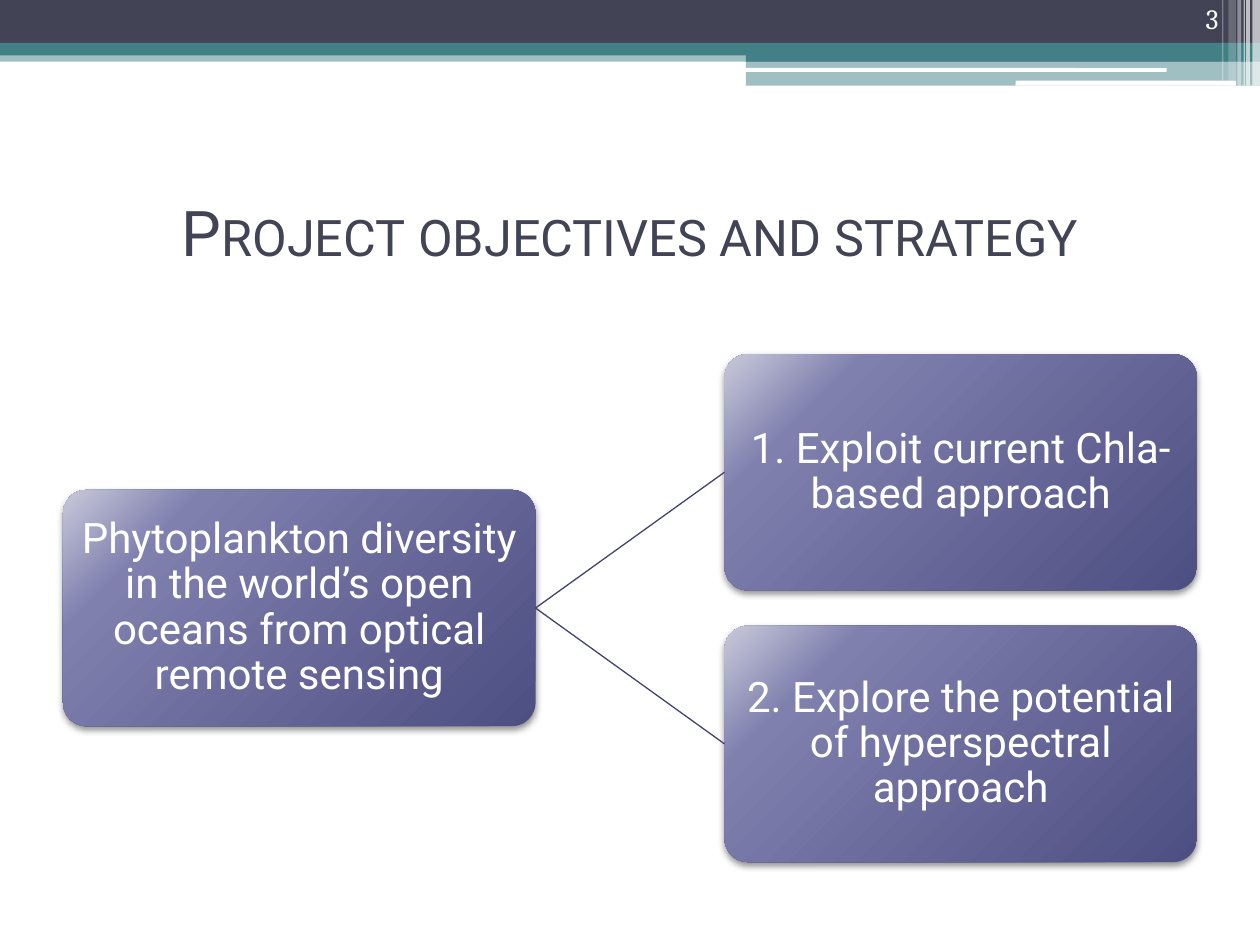
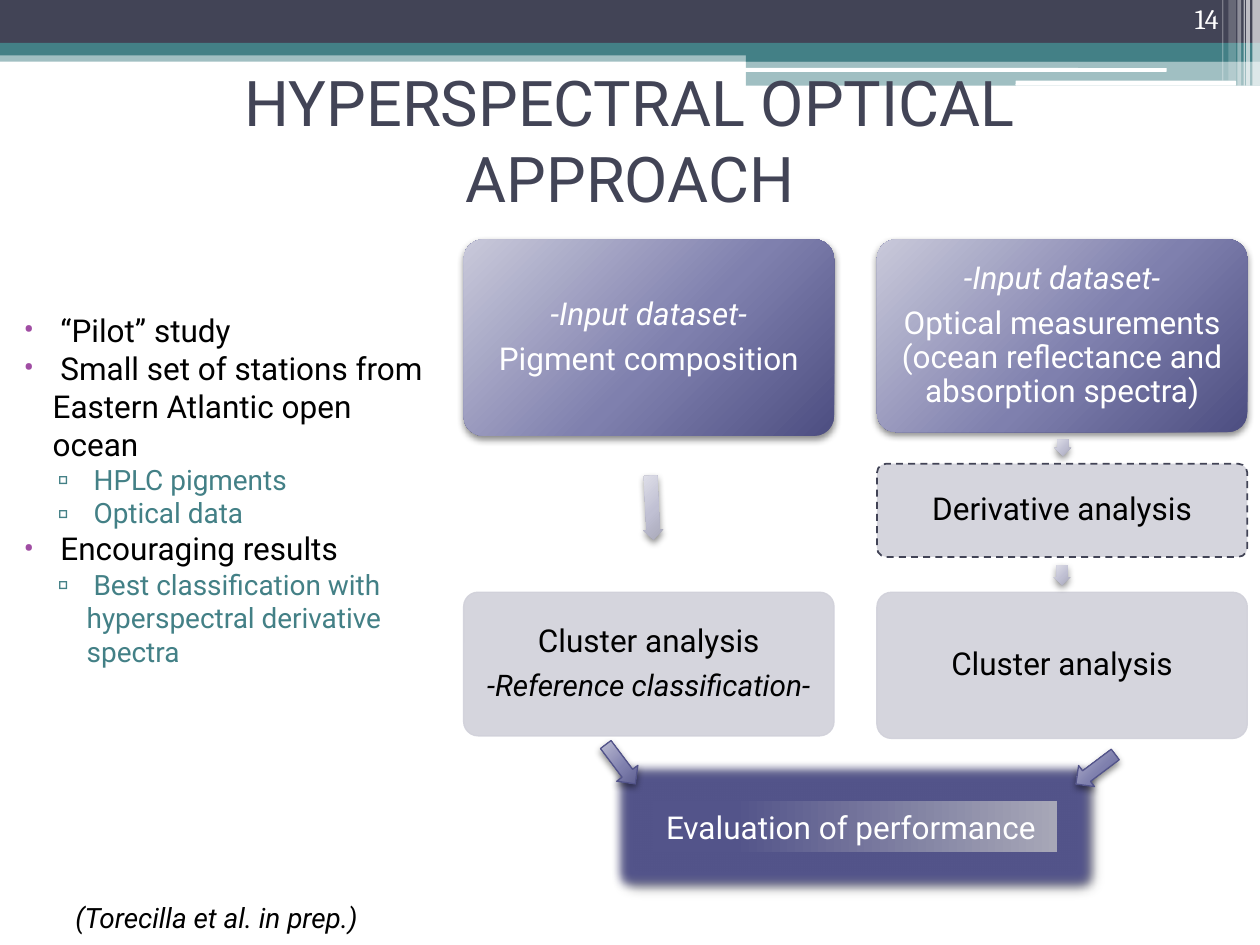
from dataclasses import dataclass
from typing import NamedTuple

from lxml.etree import SubElement
from pptx import Presentation
from pptx.dml.color import RGBColor
from pptx.enum.dml import MSO_LINE
from pptx.enum.shapes import MSO_CONNECTOR, MSO_SHAPE
from pptx.enum.text import MSO_ANCHOR, PP_ALIGN
from pptx.oxml import parse_xml
from pptx.oxml.ns import nsdecls, qn
from pptx.util import Inches, Pt

WIDTH, HEIGHT = Inches(10), Inches(7.5)


@dataclass(frozen=True)
class Theme:
    font: str = "Roboto"
    number_font: str = "Cambria"
    ink: str = "424456"
    teal: str = "438086"
    violet: str = "53548A"
    link: str = "42436F"
    bullet: str = "A04DA3"
    pale: str = "D1D1DA"
    white: str = "FFFFFF"
    black: str = "000000"
    title: float = 36
    card: float = 24
    body: float = 18
    note: float = 17
    small: float = 16


T = Theme()


class Box(NamedTuple):
    """Left, top, width and height in percent of the slide."""
    x: float
    y: float
    w: float
    h: float

    def emu(self) -> tuple[int, ...]:
        sizes = (WIDTH, HEIGHT, WIDTH, HEIGHT)
        return tuple(round(v * s / 100) for v, s in zip(self, sizes))


class Gradient(NamedTuple):
    stops: tuple
    radial: bool = True


class Shadow(NamedTuple):
    alpha: int = 45
    blur: float = 4
    dist: float = 2
    angle: int = 90


class Band(NamedTuple):
    box: Box
    color: str
    alpha: int = 100
    rounded: bool = False


class Card(NamedTuple):
    box: Box
    lines: tuple
    fill: object
    color: str = T.white
    line: str | None = None
    dashed: bool = False
    size: float = T.body


class Arrow(NamedTuple):
    box: Box
    angle: float
    fill: Gradient
    line: str | None = None
    shaft: float = 0.667


class Line(NamedTuple):
    text: str
    italic: bool = False
    size: float | None = None


class Bullet(NamedTuple):
    text: str
    level: int = 0


CARD_GRAD = Gradient(((0, "C9C9DA"), (20, "7F80AE"), (100, "4D4E81")))
DEEP_GRAD = Gradient(((0, "C9C9DA"), (55, "7F80AE"), (100, "4D4E81")))
PALE_GRAD = Gradient(((0, "E1E1EA"), (55, "C0C0D3"), (100, "A7A7B7")))
RESULT_GRAD = Gradient(((0, T.violet), (20, T.violet), (100, "A7A7B7")), radial=False)

BANDS = [
    Band(Box(0, 5.33, 100, 1.2), T.teal, 50),
    Band(Box(0, 0, 100, 4.53), T.ink),
    Band(Box(0, 4.53, 100, 1.33), T.teal),
    Band(Box(59.2, 5.2, 40.8, 1.33), T.teal),
    Band(Box(59.2, 6.4, 40.8, 2.67), T.teal, 50),
    Band(Box(59.1, 7.2, 33.5, 0.4), T.white, rounded=True),
    Band(Box(80.6, 8.53, 17.5, 0.53), T.white, rounded=True),
    *(Band(Box(x, 0, w, h), T.white, alpha) for x, w, h, alpha in (
        (99.4, 0.6, 9.07, 65), (98.9, 0.3, 9.07, 65), (98.7, 0.1, 9.07, 60),
        (98.2, 0.3, 9.07, 40), (97.5, 0.6, 8.53, 20), (97, 0.1, 8.53, 30))),
]


def rgb(color: str) -> RGBColor:
    return RGBColor.from_string(color)


def set_alpha(fill_parent, alpha: int) -> None:
    if alpha < 100:
        clr = fill_parent.find(qn("a:solidFill")).find(qn("a:srgbClr"))
        SubElement(clr, qn("a:alpha"), val=str(alpha * 1000))


def set_gradient(sp, grad: Gradient) -> None:
    stops = "".join(f'<a:gs pos="{pos * 1000}"><a:srgbClr val="{c}"/></a:gs>'
                    for pos, c in grad.stops)
    course = ('<a:path path="circle"><a:fillToRect l="-40000" t="-90000" '
              'r="140000" b="190000"/></a:path>' if grad.radial
              else '<a:lin ang="0" scaled="0"/>')
    spPr = sp._element.spPr
    spPr.replace(spPr.find(qn("a:solidFill")), parse_xml(
        f'<a:gradFill {nsdecls("a")} rotWithShape="1">'
        f'<a:gsLst>{stops}</a:gsLst>{course}</a:gradFill>'))


def add_shadow(sp, shadow: Shadow) -> None:
    effects = sp._element.spPr.find(qn("a:effectLst"))
    effects.append(parse_xml(
        f'<a:outerShdw {nsdecls("a")} blurRad="{Pt(shadow.blur)}" '
        f'dist="{Pt(shadow.dist)}" dir="{shadow.angle * 60000}" rotWithShape="0">'
        f'<a:srgbClr val="{T.black}"><a:alpha val="{shadow.alpha * 1000}"/>'
        '</a:srgbClr></a:outerShdw>'))


def add_glow(sp, color: str, radius: float) -> None:
    effects = sp._element.spPr.find(qn("a:effectLst"))
    effects.append(parse_xml(f'<a:glow {nsdecls("a")} rad="{Pt(radius)}">'
                             f'<a:srgbClr val="{color}"/></a:glow>'))


def add_figure(slide, kind, box: Box, fill, *, alpha: int = 100, line: str | None = None,
               width: float = 0.75, adj: tuple = ()):
    sp = slide.shapes.add_shape(kind, *box.emu())
    sp.shadow.inherit = False
    for i, value in enumerate(adj):
        sp.adjustments[i] = value
    sp.fill.solid()
    if isinstance(fill, Gradient):
        set_gradient(sp, fill)
    else:
        sp.fill.fore_color.rgb = rgb(fill)
        set_alpha(sp._element.spPr, alpha)
    if line:
        sp.line.color.rgb = rgb(line)
        sp.line.width = Pt(width)
    else:
        sp.line.fill.background()
    return sp


def write(tf, text: str, *, size: float, color: str, font: str = T.font,
          italic: bool = False, small_caps: bool = False, align=PP_ALIGN.LEFT,
          spacing: float | None = None, before: float = 0):
    """Fill the empty first paragraph, or add one, and return it."""
    p = tf.paragraphs[0]
    if p.runs:
        p = tf.add_paragraph()
        p.space_before = Pt(before)
    p.alignment = align
    if spacing:
        p.line_spacing = spacing
    r = p.add_run()
    r.text = text
    r.font.name, r.font.size, r.font.italic = font, Pt(size), italic
    r.font.color.rgb = rgb(color)
    if small_caps:
        r._r.get_or_add_rPr().set("cap", "small")
    return p


def setup_frame(tf, *, anchor=MSO_ANCHOR.TOP, wrap: bool = True, inset: float | None = None):
    tf.word_wrap, tf.vertical_anchor = wrap, anchor
    if inset is not None:
        tf.margin_left = tf.margin_right = tf.margin_top = tf.margin_bottom = Inches(inset)
    return tf


def add_text_frame(slide, box: Box, **frame):
    return setup_frame(slide.shapes.add_textbox(*box.emu()).text_frame, **frame)


def add_card(slide, card: Card):
    raised = isinstance(card.fill, Gradient)
    sp = add_figure(slide, MSO_SHAPE.ROUNDED_RECTANGLE, card.box, card.fill,
                    alpha=90, line=card.line, width=1 if card.dashed else 0.75, adj=(0.1,))
    if raised:
        add_shadow(sp, Shadow())
    elif card.dashed:
        sp.line.dash_style = MSO_LINE.DASH
    else:
        set_alpha(sp.line._ln, 90)
    tf = setup_frame(sp.text_frame, anchor=MSO_ANCHOR.MIDDLE, inset=0.02)
    for line in card.lines:
        write(tf, line.text, size=line.size or card.size, color=card.color,
              italic=line.italic, align=PP_ALIGN.CENTER, spacing=0.9, before=6.3)
    return sp


def add_arrow(slide, arrow: Arrow) -> None:
    sp = add_figure(slide, MSO_SHAPE.RIGHT_ARROW, arrow.box, arrow.fill,
                    line=arrow.line, adj=(arrow.shaft, 0.5))
    sp.rotation = arrow.angle
    add_shadow(sp, Shadow())


def add_branch(slide, start: Box, end: Box) -> None:
    """Join the right side of one card to the left side of another."""
    x1, y1, w1, h1 = start.emu()
    x2, y2, _, h2 = end.emu()
    c = slide.shapes.add_connector(MSO_CONNECTOR.STRAIGHT, x1 + w1, y1 + h1 // 2,
                                   x2, y2 + h2 // 2)
    c.line.color.rgb, c.line.width = rgb(T.link), Pt(0.75)
    SubElement(c._element.spPr, qn("a:effectLst"))


def add_bullets(slide, box: Box, bullets: list[Bullet]) -> None:
    styles = (("•", T.bullet, T.body, T.black, 0.23), ("▫", T.teal, T.small, T.teal, 0.5))
    tf = add_text_frame(slide, box)
    for bullet in bullets:
        mark, mark_color, size, color, left = styles[bullet.level]
        p = write(tf, bullet.text, size=size, color=color)
        pPr = p._p.get_or_add_pPr()
        pPr.set("marL", str(Inches(left)))
        pPr.set("indent", str(-Inches(0.23)))
        SubElement(SubElement(pPr, qn("a:buClr")), qn("a:srgbClr"), val=mark_color)
        SubElement(pPr, qn("a:buFont"), typeface=T.font)
        SubElement(pPr, qn("a:buChar"), char=mark)


def new_slide(prs, title: str, number: int, title_top: float, small_caps: bool = False):
    """Add a blank slide with the bands, the title and the slide number."""
    slide = prs.slides.add_slide(prs.slide_layouts[6])
    for band in BANDS:
        kind = MSO_SHAPE.ROUNDED_RECTANGLE if band.rounded else MSO_SHAPE.RECTANGLE
        add_figure(slide, kind, band.box, band.color, alpha=band.alpha)
    tf = add_text_frame(slide, Box(5, title_top, 90, 15.6), anchor=MSO_ANCHOR.MIDDLE)
    write(tf, title, size=T.title, color=T.ink, small_caps=small_caps,
          align=PP_ALIGN.CENTER)
    tf = add_text_frame(slide, Box(89.4, 0, 8.3, 4.4), anchor=MSO_ANCHOR.BOTTOM)
    tf.margin_top = 0
    write(tf, str(number), size=T.small, color=T.white, font=T.number_font,
          align=PP_ALIGN.RIGHT)
    return slide


def build_objectives(prs) -> None:
    slide = new_slide(prs, "Project objectives and strategy", 3, 16.67, small_caps=True)
    w, h, left, top = 37.5, 25, 5, 37.47
    col_step, row_step = 1.4 * w, 1.15 * h

    def tree_card(col: int, row: float, text: str) -> Box:
        box = Box(left + col * col_step, top + row * row_step, w, h)
        add_card(slide, Card(box, (Line(text),), CARD_GRAD, size=T.card))
        return box

    root = tree_card(
        0, 0.5, "Phytoplankton diversity in the world’s open oceans from optical remote sensing")
    for row, text in enumerate(("1. Exploit current Chla-based approach",
                                "2. Explore the potential of hyperspectral approach")):
        add_branch(slide, root, tree_card(1, row, text))


def build_approach(prs) -> None:
    slide = new_slide(prs, "HYPERSPECTRAL OPTICAL APPROACH", 14, 6.93)
    pigments, optics, w = 36.8, 69.6, 29.4
    data_top, cluster_top = 25.33, 62.67
    dataset, cluster = Line("-Input dataset-", italic=True), Line("Cluster analysis")
    reference = Line("-Reference classification-", italic=True, size=T.note)
    measured = Line("Optical measurements (ocean reflectance and absorption spectra)")
    for card in (
        Card(Box(pigments, data_top, w, 20.8), (dataset, Line("Pigment composition")), DEEP_GRAD),
        Card(Box(pigments, cluster_top, w, 15.2), (cluster, reference), T.pale, T.black, T.pale),
        Card(Box(optics, data_top, w, 20.4), (dataset, measured), DEEP_GRAD),
        Card(Box(optics, 49.07, w, 9.87), (Line("Derivative analysis"),), T.pale, T.black,
             T.ink, dashed=True),
        Card(Box(optics, cluster_top, w, 15.47), (cluster,), T.pale, T.black, T.pale),
    ):
        add_card(slide, card)

    result = add_figure(slide, MSO_SHAPE.RECTANGLE, Box(51.8, 84.8, 32.1, 5.33), RESULT_GRAD)
    add_glow(result, T.violet, 12)
    add_shadow(result, Shadow(43, 4, 3, 45))
    tf = setup_frame(result.text_frame, wrap=False)
    write(tf, "Evaluation of performance ", size=T.body, color=T.white, align=PP_ALIGN.CENTER)

    for arrow in (
        Arrow(Box(49.2, 52.67, 5.1, 2.13), 87.2, PALE_GRAD),
        Arrow(Box(83.7, 46.53, 1.3, 1.73), 90, PALE_GRAD),
        Arrow(Box(83.5, 60, 1.6, 1.73), 90, PALE_GRAD),
        Arrow(Box(47.3, 79.47, 3.9, 2.8), 53.1, DEEP_GRAD, T.violet, 0.5),
        Arrow(Box(85, 80, 3.9, 2.8), 143.1, DEEP_GRAD, T.violet, 0.5),
    ):
        add_arrow(slide, arrow)

    tf = add_text_frame(slide, Box(5, 94.67, 28.1, 4.93), wrap=False)
    write(tf, "(Torecilla et al. in prep.)", size=T.small, color=T.black, italic=True)
    add_bullets(slide, Box(0.9, 32.27, 34, 35.47), [
        Bullet(" “Pilot” study"),
        Bullet(" Small set of stations from Eastern Atlantic open ocean"),
        Bullet(" HPLC pigments", 1),
        Bullet(" Optical data", 1),
        Bullet(" Encouraging results"),
        Bullet(" Best classification with hyperspectral derivative spectra", 1),
    ])


def main() -> None:
    prs = Presentation()
    prs.slide_width, prs.slide_height = WIDTH, HEIGHT
    build_objectives(prs)
    build_approach(prs)
    prs.save("out.pptx")


if __name__ == "__main__":
    main()
